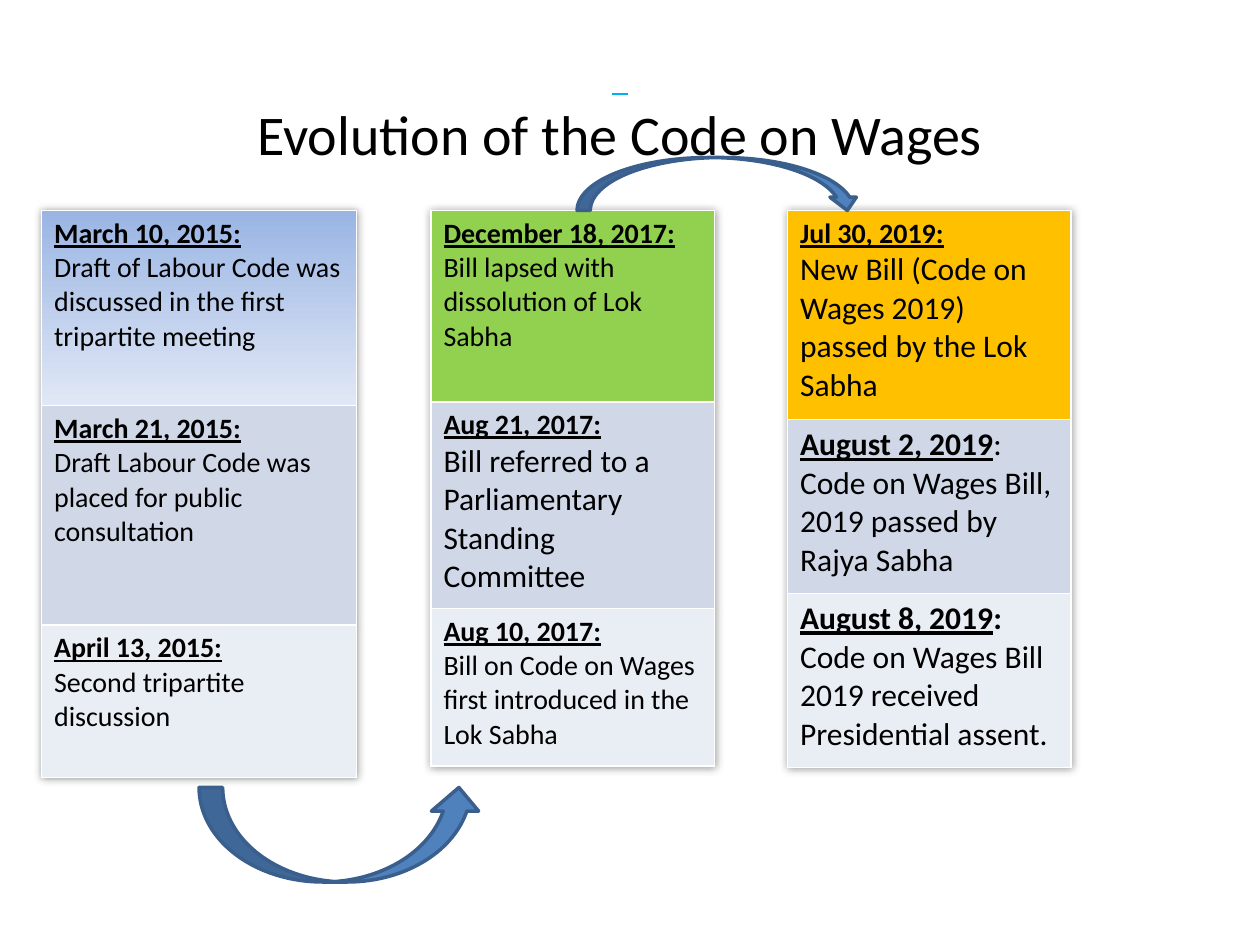
from copy import deepcopy

from lxml.etree import SubElement
from pptx import Presentation
from pptx.dml.color import RGBColor
from pptx.enum.shapes import MSO_SHAPE as Shape
from pptx.enum.text import MSO_ANCHOR as Anchor, PP_ALIGN as Align
from pptx.oxml.ns import qn
from pptx.util import Inches, Pt

TOP = 1.67
BODY = ("D0D8E8", "E9EDF4")

# Each step: date, colon style (underlined, bold), date size, text, text size
PHASES = [
    (0.33, 2.5, (1.55, 1.74, 1.21), ("9AB5E4", "E1E8F5"), [
        ([("March 10, 2015:", True, True)], 16,
         "Draft of Labour Code was discussed in the first tripartite meeting", 16),
        ([("March 21, 2015:", True, True)], 16,
         "Draft Labour Code was placed for public consultation", 16),
        ([("April 13, 2015:", True, True)], 16, "Second tripartite discussion", 16),
    ]),
    (3.42, 2.25, (1.52, 1.64, 1.25), ("92D050",), [
        ([("December 18, 2017:", True, True)], 16,
         "Bill lapsed with dissolution of Lok Sabha", 16),
        ([("Aug 21, 2017:", True, True)], 16,
         "Bill referred to a Parliamentary Standing Committee", 18),
        ([("Aug 10, 2017:", True, True)], 16,
         "Bill on Code on Wages first introduced in the Lok Sabha", 16),
    ]),
    (6.25, 2.25, (1.66, 1.38, 1.38), ("FFC000",), [
        ([("Jul 30, 2019:", True, True)], 16,
         "New Bill (Code on Wages 2019) passed by the Lok Sabha", 18),
        ([("August 2, 2019", True, True), (":", False, False)], 18,
         "Code on Wages Bill, 2019 passed by Rajya Sabha", 18),
        ([("August 8, 2019", True, True), (":", True, False)], 18,
         "Code on Wages Bill 2019 received Presidential assent.", 18),
    ]),
]


def paint(color, value):
    """Set a colour from a hex string."""
    color.rgb = RGBColor.from_string(value)


def add_run(para, text, size, bold=False, under=False, face="Calibri", color="000000"):
    """Add one formatted run to a paragraph."""
    run = para.add_run()
    run.text = text
    font = run.font
    font.name, font.size = face, Pt(size)
    font.bold, font.underline = bold, under
    paint(font.color, color)
    return run


def add_title(slide):
    """Place and fill the title."""
    title = slide.shapes.title
    title.left, title.top = Inches(0.67), Inches(0.25)
    title.width, title.height = Inches(8.5), Inches(1.08)
    frame = title.text_frame
    frame.word_wrap = True
    frame.vertical_anchor = Anchor.MIDDLE
    para = frame.paragraphs[0]
    para.alignment = Align.CENTER
    lead = add_run(para, " ", 32, True, True, "Montserrat", "00B0F0")
    para.add_line_break()
    para._p[-1].append(deepcopy(lead._r.rPr))
    add_run(para, "Evolution of the Code on Wages", 32)


def fill_cell(cell, colors):
    """Fill a cell with one colour or a downward gradient."""
    if len(colors) == 1:
        cell.fill.solid()
        paint(cell.fill.fore_color, colors[0])
        return
    cell.fill.gradient()
    cell.fill.gradient_angle = 270
    for stop, value, place in zip(cell.fill.gradient_stops, colors, (0, 1)):
        paint(stop.color, value)
        stop.position = place


def add_shade(table):
    """Give a table a soft outer shadow."""
    props = table._tbl.tblPr
    effects = SubElement(props, qn("a:effectLst"))
    props.insert(0, effects)
    shade = SubElement(effects, qn("a:outerShdw"), blurRad="63500", algn="ctr", rotWithShape="0")
    tone = SubElement(shade, qn("a:srgbClr"), val="000000")
    SubElement(tone, qn("a:alpha"), val="40000")


def add_phase(slide, left, width, heights, head, steps):
    """Add one column of dated steps."""
    frame = slide.shapes.add_table(len(steps), 1, Inches(left), Inches(TOP),
                                   Inches(width), Inches(sum(heights)))
    table = frame.table
    add_shade(table)
    fills = [head] + [(value,) for value in BODY]
    for row, height, colors, step in zip(table.rows, heights, fills, steps):
        date, date_size, text, size = step
        row.height = Inches(height)
        cell = row.cells[0]
        fill_cell(cell, colors)
        para = cell.text_frame.paragraphs[0]
        for part, bold, under in date:
            add_run(para, part, date_size, bold, under)
        add_run(cell.text_frame.add_paragraph(), text, size)


def add_arrow(slide, kind, left, top, height):
    """Add a curved arrow between two columns."""
    arrow = slide.shapes.add_shape(kind, Inches(left), Inches(top), Inches(2.25), Inches(height))
    arrow.shadow.inherit = False
    arrow.fill.solid()
    paint(arrow.fill.fore_color, "4F81BD")
    paint(arrow.line.color, "3A5F8C")
    arrow.line.width = Pt(2)


def main():
    """Build and save the slide."""
    deck = Presentation()
    deck.slide_width, deck.slide_height = Inches(10), Inches(7.5)
    slide = deck.slides.add_slide(deck.slide_layouts[5])
    add_title(slide)
    for phase in PHASES:
        add_phase(slide, *phase)
    add_arrow(slide, Shape.CURVED_UP_ARROW, 1.58, 6.25, 0.75)
    add_arrow(slide, Shape.CURVED_DOWN_ARROW, 4.58, 1.25, 0.42)
    deck.save("out.pptx")


if __name__ == "__main__":
    main()
